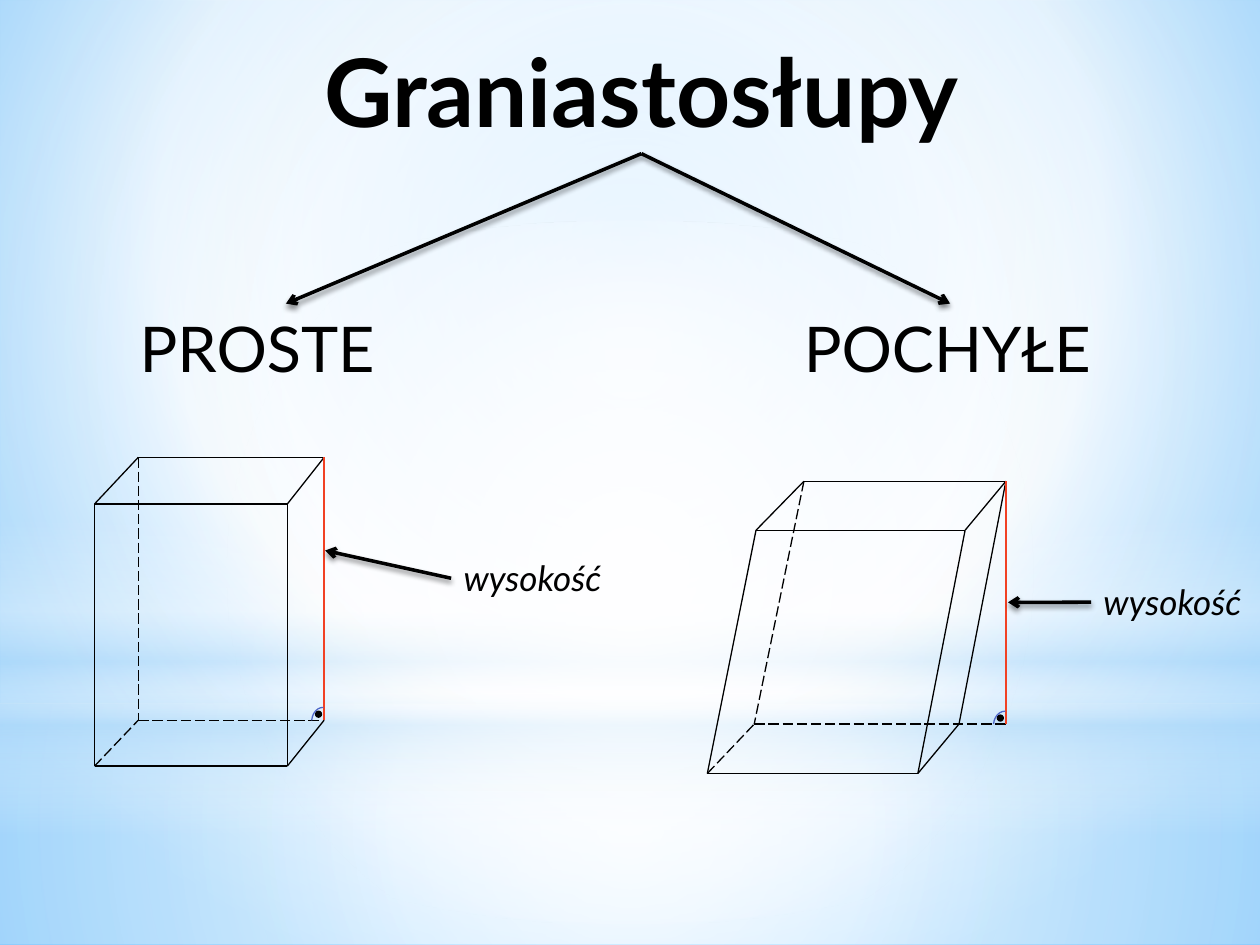
"""Build a slide that compares right and oblique prisms."""
import pptx
import pptx.dml.color
import pptx.enum.dml
import pptx.enum.shapes
import pptx.enum.text
import pptx.oxml.ns
import pptx.util
from lxml import etree

Pt = pptx.util.Pt
qn = pptx.oxml.ns.qn
Kind = pptx.enum.shapes.MSO_SHAPE
COLOURS = {"ink": "000000", "height": "F14124", "angle": "4E67C8", "white": "FFFFFF",
           "haze": "B4DCFA", "sky": "9ED5FF", "deep": "5BB9FF"}
RGB = {name: pptx.dml.color.RGBColor.from_string(value) for name, value in COLOURS.items()}


def paint_gradient(owner, stops, focus):
    gradient = next(owner.iter(qn("a:gradFill")))
    gradient.clear()
    stop_list = etree.SubElement(gradient, qn("a:gsLst"))
    for position, colour, opacity in stops:
        stop = etree.SubElement(stop_list, qn("a:gs"), pos=str(position * 1000))
        tint = etree.SubElement(stop, qn("a:srgbClr"), val=COLOURS[colour])
        if opacity < 100:
            etree.SubElement(tint, qn("a:alpha"), val=str(opacity * 1000))
    if focus is None:
        etree.SubElement(gradient, qn("a:lin"), ang="5400000", scaled="0")
    else:
        sides = {side: str(value * 1000) for side, value in zip("ltrb", focus)}
        radial = etree.SubElement(gradient, qn("a:path"), path="circle")
        etree.SubElement(radial, qn("a:fillToRect"), **sides)


def draw_line(shapes, start, end, colour="ink", dashed=False, arrow=False):
    line = shapes.add_connector(pptx.enum.shapes.MSO_CONNECTOR.STRAIGHT,
                                *(Pt(value) for value in (*start, *end)))
    line.line.color.rgb = RGB[colour]
    line.line.width = Pt(2 if arrow else 0.75)
    if dashed:
        line.line.dash_style = pptx.enum.dml.MSO_LINE.LONG_DASH
    properties = line._element.spPr
    if arrow:
        etree.SubElement(properties.find(qn("a:ln")), qn("a:tailEnd"), type="arrow")
    effects = etree.SubElement(properties, qn("a:effectLst"))
    if arrow:
        shadow = etree.SubElement(effects, qn("a:outerShdw"), blurRad=str(Pt(3.1)),
                                  dist=str(Pt(1.8)), dir="5400000", rotWithShape="0")
        tint = etree.SubElement(shadow, qn("a:srgbClr"), val=COLOURS["ink"])
        etree.SubElement(tint, qn("a:alpha"), val="45000")
    return line


presentation = pptx.Presentation()
presentation.slide_width, presentation.slide_height = Pt(720), Pt(540)
slide = presentation.slides.add_slide(presentation.slide_layouts[6])

slide.background.fill.gradient()
paint_gradient(slide.element, [(0, "sky", 100), (60, "white", 100), (100, "deep", 100)],
               (20, 10, 20, 60))
centre = (50, 50, 50, 50)
glows = [
    (Kind.RECTANGLE, 402, 138, centre, [(0, "white", 91), (37, "white", 76), (100, "haze", 79)]),
    (Kind.RECTANGLE, 0, 402, centre, [(0, "white", 89), (48, "white", 62), (100, "haze", 79)]),
    (Kind.RECTANGLE, 297, 180, None, [(0, "white", 0), (29, "white", 30), (45, "haze", 40),
                                      (55, "white", 26), (65, "haze", 60), (100, "white", 0)]),
    (Kind.OVAL, 126, 402, centre, [(0, "white", 100), (56, "white", 0)]),
]
for kind, top, height, focus, stops in glows:
    glow = slide.shapes.add_shape(kind, 0, Pt(top), Pt(720), Pt(height))
    glow.shadow.inherit = False
    glow.line.fill.background()
    glow.fill.gradient()
    paint_gradient(glow._element.spPr, stops, focus)

prisms = [
    dict(corners=dict(A=(54, 288), B=(164.2, 288), C=(164.2, 437.8), D=(54, 437.8),
                      E=(79, 261.4), F=(185.2, 261.4), H=(79, 411.6), G=(185.2, 411.6),
                      P=(185.2, 411.6)),
         solid="AB BC CD DA BF AE FE CG", label=(257.8, 314.6), tip=(185.8, 314.6)),
    dict(corners=dict(A=(432, 303), B=(551.5, 303), C=(524.5, 442), D=(404.2, 442),
                      E=(459.4, 275), F=(574.8, 275), G=(548, 413.8), H=(431, 413.8),
                      P=(574.8, 413.8)),
         solid="AB BC CD DA BF AE FE CG FG", label=(623.5, 328.3), tip=(576, 344.2)),
]
groups = [slide.shapes.add_group_shape() for prism in prisms]

italic = dict(size=Pt(20), italic=True)
captions = [
    (slide, "Graniastosłupy", (133.2, 15.1, 466.6, 72.7), dict(size=Pt(54), bold=True)),
    (slide, "PROSTE", (72.7, 173.5, 181.4, 51.1), dict(size=Pt(36))),
    (slide, "POCHYŁE", (452.2, 173.5, 181.4, 51.1), dict(size=Pt(36))),
    (groups[0], "wysokość", (*prisms[0]["label"], 96.5, 31.7), italic),
    (groups[1], "wysokość", (*prisms[1]["label"], 96.5, 31.7), italic),
]
boxes = []
for owner, wording, place, style in captions:
    box = owner.shapes.add_textbox(*(Pt(value) for value in place))
    box.text_frame.word_wrap = True
    box.text_frame.auto_size = pptx.enum.text.MSO_AUTO_SIZE.SHAPE_TO_FIT_TEXT
    run = box.text_frame.paragraphs[0].add_run()
    run.text = wording
    for attribute, value in dict(name="Lato", **style).items():
        setattr(run.font, attribute, value)
    run.font.color.rgb = RGB["ink"]
    boxes.append(box)
title, right_kind, oblique_kind, *height_labels = boxes
title.text_frame.paragraphs[0].alignment = pptx.enum.text.PP_ALIGN.CENTER

for prism_kind, tip_x in ((right_kind, 163.4), (oblique_kind, 542.9)):
    branch = draw_line(slide.shapes, (366.5, 87.8), (tip_x, 173.5), arrow=True)
    branch.begin_connect(title, 2)
    branch.end_connect(prism_kind, 0)

for prism, group, height_label in zip(prisms, groups, height_labels):
    corners = prism["corners"]
    for edges, look in ((prism["solid"], {}), ("EH DH HP", dict(dashed=True)),
                        ("FP", dict(colour="height"))):
        for start, end in edges.split():
            draw_line(group.shapes, corners[start], corners[end], **look)
    label_x, label_y = prism["label"]
    pointer = draw_line(group.shapes, (label_x, label_y + 15.85), prism["tip"], arrow=True)
    pointer.begin_connect(height_label, 1)

    foot_x, foot_y = corners["P"]
    dot = group.shapes.add_shape(Kind.OVAL, Pt(foot_x - 4.6), Pt(foot_y - 4.9), Pt(2.9), Pt(2.9))
    dot.fill.solid()
    dot.fill.fore_color.rgb = RGB["ink"]
    right_angle = group.shapes.add_shape(Kind.ARC, Pt(foot_x - 8.9), Pt(foot_y - 5.6),
                                         Pt(15.8), Pt(12.2))
    right_angle.rotation = 274.8
    right_angle.fill.background()
    for mark, colour, width in ((dot, "ink", 1.25), (right_angle, "angle", 0.75)):
        mark.shadow.inherit = False
        mark.line.color.rgb = RGB[colour]
        mark.line.width = Pt(width)

presentation.save("out.pptx")
